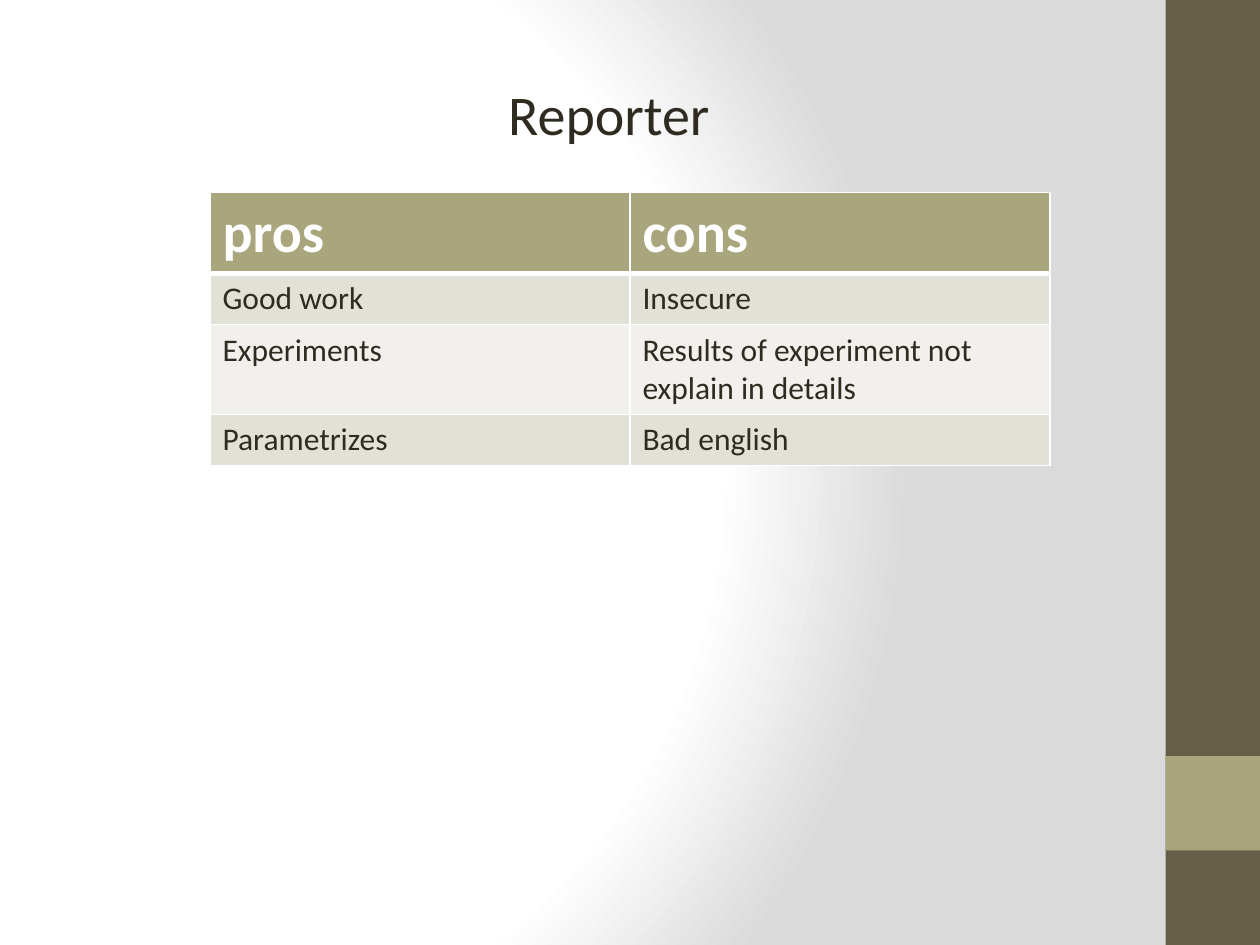
"""Build the Reporter slide with its table of pros and cons."""
from dataclasses import dataclass

from lxml.etree import SubElement
from pptx import Presentation
from pptx.dml.color import RGBColor
from pptx.enum.shapes import MSO_SHAPE
from pptx.enum.text import MSO_AUTO_SIZE, PP_ALIGN
from pptx.oxml.ns import qn
from pptx.slide import Slide
from pptx.table import _Cell
from pptx.text.text import _Paragraph
from pptx.util import Pt


@dataclass(frozen=True)
class Theme:
    font: str = "Calibri"
    heading_size: float = 32
    body_size: float = 18
    ink: str = "2F2B20"
    white: str = "FFFFFF"
    backdrop: str = "DADADA"
    bar: str = "675E47"
    accent: str = "A9A57C"
    bands: tuple[str, str] = ("E2E1D7", "F1F0EC")


@dataclass(frozen=True)
class Panel:
    left: float
    top: float
    width: float
    height: float
    color: str


THEME = Theme()
SIDE_PANELS = (
    Panel(666, 0, 54, 540, THEME.bar),
    Panel(666, 432, 54, 54, THEME.accent),
)
ROWS = (
    ("pros", "cons"),
    ("Good work", "Insecure"),
    ("Experiments", "Results of experiment not explain in details"),
    ("Parametrizes", "Bad english"),
)
ROW_HEIGHT = 29.2


def style_text(paragraph: _Paragraph, size: float, color: str, bold: bool = False) -> None:
    for span in paragraph.runs:
        span.font.name = THEME.font
        span.font.size = Pt(size)
        span.font.bold = bold
        span.font.color.rgb = RGBColor.from_string(color)


def paint_background(page: Slide) -> None:
    page.background.fill.gradient()
    gradient = page.element.find(".//" + qn("a:gradFill"))
    for child in list(gradient):
        gradient.remove(child)
    stops = SubElement(gradient, qn("a:gsLst"))
    for percent, color in ((0, THEME.white), (75, THEME.white), (100, THEME.backdrop)):
        stop = SubElement(stops, qn("a:gs"), pos=str(percent * 1000))
        SubElement(stop, qn("a:srgbClr"), val=color)
    circle = SubElement(gradient, qn("a:path"), path="circle")
    SubElement(circle, qn("a:fillToRect"), l="20000", t="50000", r="100000", b="50000")


def draw_panel(page: Slide, panel: Panel) -> None:
    shape = page.shapes.add_shape(
        MSO_SHAPE.RECTANGLE, Pt(panel.left), Pt(panel.top), Pt(panel.width), Pt(panel.height)
    )
    shape.shadow.inherit = False
    shape.fill.solid()
    shape.fill.fore_color.rgb = RGBColor.from_string(panel.color)
    shape.line.fill.background()


def draw_title(page: Slide, text: str) -> None:
    box = page.shapes.add_textbox(Pt(78), Pt(42), Pt(540), Pt(46))
    frame = box.text_frame
    frame.word_wrap = True
    frame.auto_size = MSO_AUTO_SIZE.SHAPE_TO_FIT_TEXT
    frame.text = text
    paragraph = frame.paragraphs[0]
    paragraph.alignment = PP_ALIGN.CENTER
    style_text(paragraph, THEME.heading_size, THEME.ink)


def style_cell(cell: _Cell, row: int) -> None:
    header = row == 0
    properties = cell._tc.get_or_add_tcPr()
    for side in ("lnL", "lnR", "lnT", "lnB"):
        heavy = (header and side == "lnB") or (row == 1 and side == "lnT")
        border = SubElement(properties, qn(f"a:{side}"), w=str(Pt(3 if heavy else 1)))
        SubElement(SubElement(border, qn("a:solidFill")), qn("a:srgbClr"), val=THEME.white)
    cell.fill.solid()
    color = THEME.accent if header else THEME.bands[(row - 1) % 2]
    cell.fill.fore_color.rgb = RGBColor.from_string(color)
    style_text(
        cell.text_frame.paragraphs[0],
        THEME.heading_size if header else THEME.body_size,
        THEME.white if header else THEME.ink,
        header,
    )


def draw_table(page: Slide) -> None:
    table = page.shapes.add_table(
        len(ROWS), len(ROWS[0]), Pt(120), Pt(110), Pt(480), Pt(ROW_HEIGHT * len(ROWS))
    ).table
    for row, texts in enumerate(ROWS):
        table.rows[row].height = Pt(ROW_HEIGHT)
        for column, text in enumerate(texts):
            cell = table.cell(row, column)
            cell.text_frame.text = text
            style_cell(cell, row)


def main() -> None:
    deck = Presentation()
    deck.slide_width, deck.slide_height = Pt(720), Pt(540)
    page = deck.slides.add_slide(deck.slide_layouts[6])
    paint_background(page)
    for panel in SIDE_PANELS:
        draw_panel(page, panel)
    draw_table(page)
    draw_title(page, "Reporter")
    deck.save("out.pptx")


if __name__ == "__main__":
    main()
